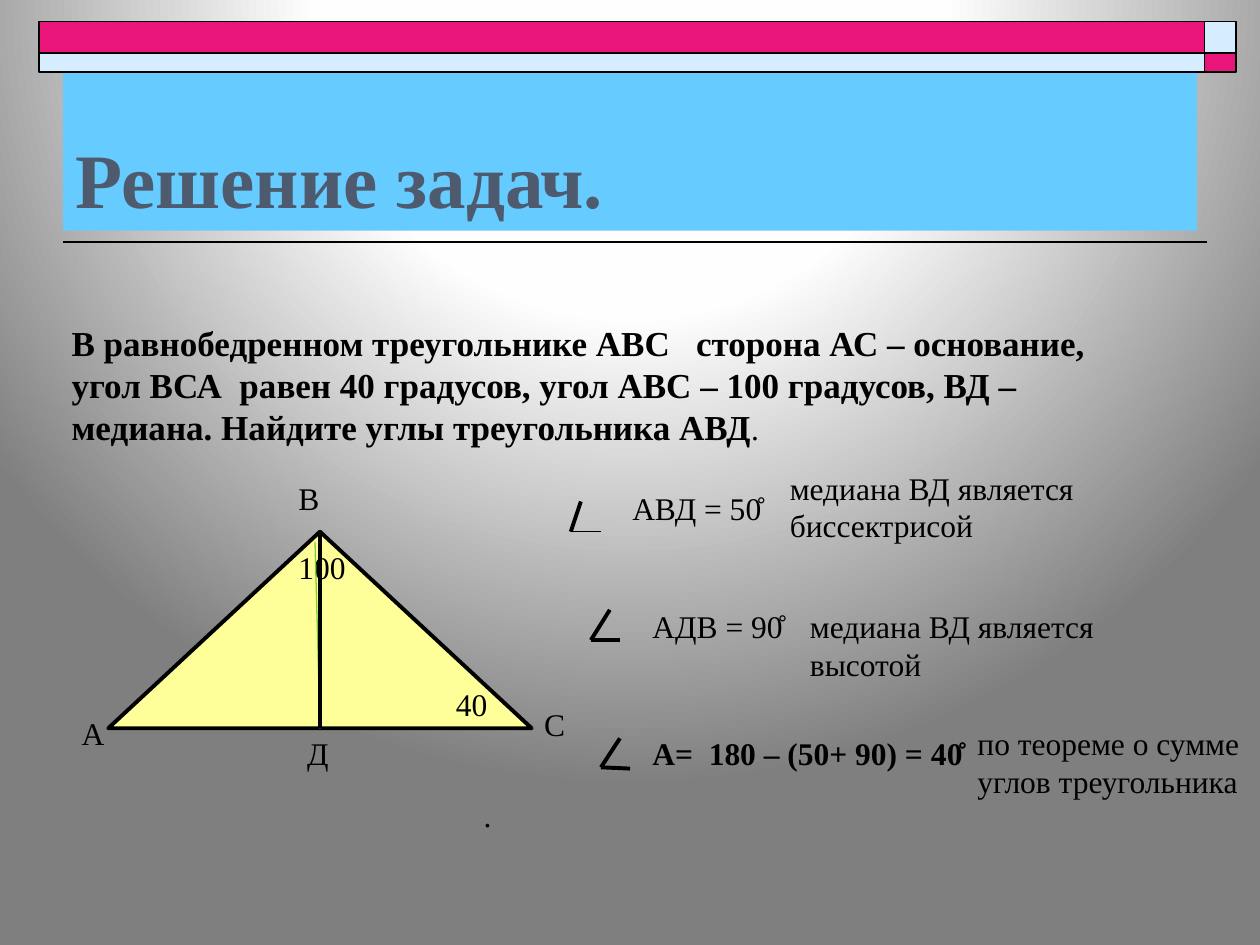
from dataclasses import dataclass

from lxml import etree
from pptx import Presentation
from pptx import util as u
from pptx.dml.color import RGBColor
from pptx.enum import shapes, text
from pptx.oxml.ns import qn


@dataclass(frozen=True)
class Theme:
    font: str = "Times New Roman"
    black: str = "000000"
    pink: str = "EA157A"
    pale_blue: str = "D6ECFF"
    title_fill: str = "66CCFF"
    title_text: str = "4E5B6F"
    triangle: str = "FFFF99"
    green: str = "7CD036"
    backdrop: tuple = ((0, "FFFFFF"), (40, "FEFEFE"), (100, "7F7F7F"))
    title_size: int = 44
    problem_size: int = 20
    body_size: int = 18
    thin: float = 0.75
    frame: float = 1
    thick: float = 2.25


THEME = Theme()


def set_background(slide):
    """Fill the background with a circular gradient centred above the slide."""
    slide.background.fill.gradient()
    gradient = slide._element.find(".//" + qn("a:gradFill"))
    for child in list(gradient):
        gradient.remove(child)
    stops = etree.SubElement(gradient, qn("a:gsLst"))
    for percent, color in THEME.backdrop:
        stop = etree.SubElement(stops, qn("a:gs"), pos=str(percent * 1000))
        etree.SubElement(stop, qn("a:srgbClr"), val=color)
    circle = etree.SubElement(gradient, qn("a:path"), path="circle")
    etree.SubElement(circle, qn("a:fillToRect"),
                     l="50000", t="-80000", r="50000", b="180000")


def add_line(slide, start, end, width=THEME.thick, color=THEME.black):
    points = [u.Inches(value) for value in (*start, *end)]
    line = slide.shapes.add_connector(shapes.MSO_CONNECTOR.STRAIGHT, *points)
    line.line.width = u.Pt(width)
    line.line.color.rgb = RGBColor.from_string(color)
    etree.SubElement(line._element.spPr, qn("a:effectLst"))


def add_block(slide, box, fill, kind=shapes.MSO_SHAPE.RECTANGLE, outline=None):
    """Add a filled preset shape; without an outline width it has no border."""
    shape = slide.shapes.add_shape(kind, *map(u.Inches, box))
    shape.shadow.inherit = False
    shape.fill.solid()
    shape.fill.fore_color.rgb = RGBColor.from_string(fill)
    if outline is None:
        shape.line.fill.background()
    else:
        shape.line.width = u.Pt(outline)
        shape.line.color.rgb = RGBColor.from_string(THEME.black)
    return shape


def add_run(paragraph, words, size=THEME.body_size, bold=False, color=THEME.black):
    run = paragraph.add_run()
    run.text = words
    run.font.name = THEME.font
    run.font.size = u.Pt(size)
    run.font.bold = bold
    run.font.color.rgb = RGBColor.from_string(color)


def add_text(slide, words, box, **format):
    """Add a wrapping text box and return its paragraph."""
    frame = slide.shapes.add_textbox(*map(u.Inches, box)).text_frame
    frame.word_wrap = True
    paragraph = frame.paragraphs[0]
    add_run(paragraph, words, **format)
    return paragraph


def add_header(slide):
    add_line(slide, (9.58, 1.92), (0.5, 1.92), THEME.frame)
    for left, width, colors in (
        (0.31, 9.25, (THEME.pink, THEME.pale_blue)),
        (9.56, 0.25, (THEME.pale_blue, THEME.pink)),
    ):
        for top, height, color in zip((0.17, 0.42), (0.25, 0.15), colors):
            add_block(slide, (left, top, width, height), color, outline=THEME.frame)

    title = add_block(slide, (0.5, 0.58, 9, 1.25), THEME.title_fill).text_frame
    title.word_wrap = True
    title.vertical_anchor = text.MSO_ANCHOR.BOTTOM
    title.paragraphs[0].alignment = text.PP_ALIGN.LEFT
    add_run(title.paragraphs[0], "Решение задач.", size=THEME.title_size,
            bold=True, color=THEME.title_text)


def add_problem(slide):
    problem = add_text(
        slide,
        "В равнобедренном треугольнике АВС   сторона АС – основание, "
        "угол ВСА  равен 40 градусов, угол АВС – 100 градусов, "
        "ВД – медиана. Найдите углы треугольника АВД",
        (0.47, 2.5, 8.75, 1.11), size=THEME.problem_size, bold=True)
    add_run(problem, ".")
    add_text(slide, ".", (3.74, 6.27, 5.28, 0.4))


def add_triangle(slide):
    add_block(slide, (0.86, 4.22, 3.36, 1.56), THEME.triangle,
              shapes.MSO_SHAPE.ISOSCELES_TRIANGLE, THEME.thick)
    for label, left, top, width in (
        ("А", 0.55, 5.62, 0.31),
        ("С", 4.22, 5.55, 0.39),
        ("В", 2.27, 3.75, 0.62),
        ("40", 3.52, 5.39, 0.55),
        ("100", 2.27, 4.3, 0.78),
        ("Д", 2.34, 5.78, 0.86),
    ):
        add_text(slide, label, (left, top, width, 0.4))
    add_line(slide, (2.5, 4.3), (2.54, 5.78), THEME.thin, THEME.green)
    add_line(slide, (2.54, 4.22), (2.54, 5.78))


def add_angle_sign(slide, vertex, upper, right, base_width=THEME.thick):
    add_line(slide, vertex, upper)
    add_line(slide, vertex, right, base_width)


def add_solution(slide):
    add_angle_sign(slide, (4.53, 4.22), (4.61, 3.98), (4.77, 4.22), THEME.thin)
    add_angle_sign(slide, (4.69, 5.08), (4.84, 4.84), (4.92, 5.08))
    add_angle_sign(slide, (4.77, 6.09), (4.92, 5.86), (5, 6.1))

    add_text(slide, "АВД = 50̊", (4.92, 3.83, 1.33, 0.4))
    add_text(slide, "АДВ = 90̊", (5.08, 4.77, 1.25, 0.4))
    add_text(slide, "А=  180 – (50+ 90) = 40̊", (5.08, 5.78, 2.97, 0.4), bold=True)

    for reason, left, top, width in (
        ("медиана ВД является биссектрисой", 6.17, 3.67, 3.83),
        ("медиана ВД является высотой", 6.33, 4.77, 2.97),
        ("по теореме о сумме углов треугольника", 7.66, 5.7, 2.34),
    ):
        add_text(slide, reason, (left, top, width, 0.71))


def main():
    presentation = Presentation()
    presentation.slide_width = u.Inches(10)
    presentation.slide_height = u.Inches(7.5)
    slide = presentation.slides.add_slide(presentation.slide_layouts[6])
    set_background(slide)
    add_header(slide)
    add_problem(slide)
    add_triangle(slide)
    add_solution(slide)
    presentation.save("out.pptx")


if __name__ == "__main__":
    main()
